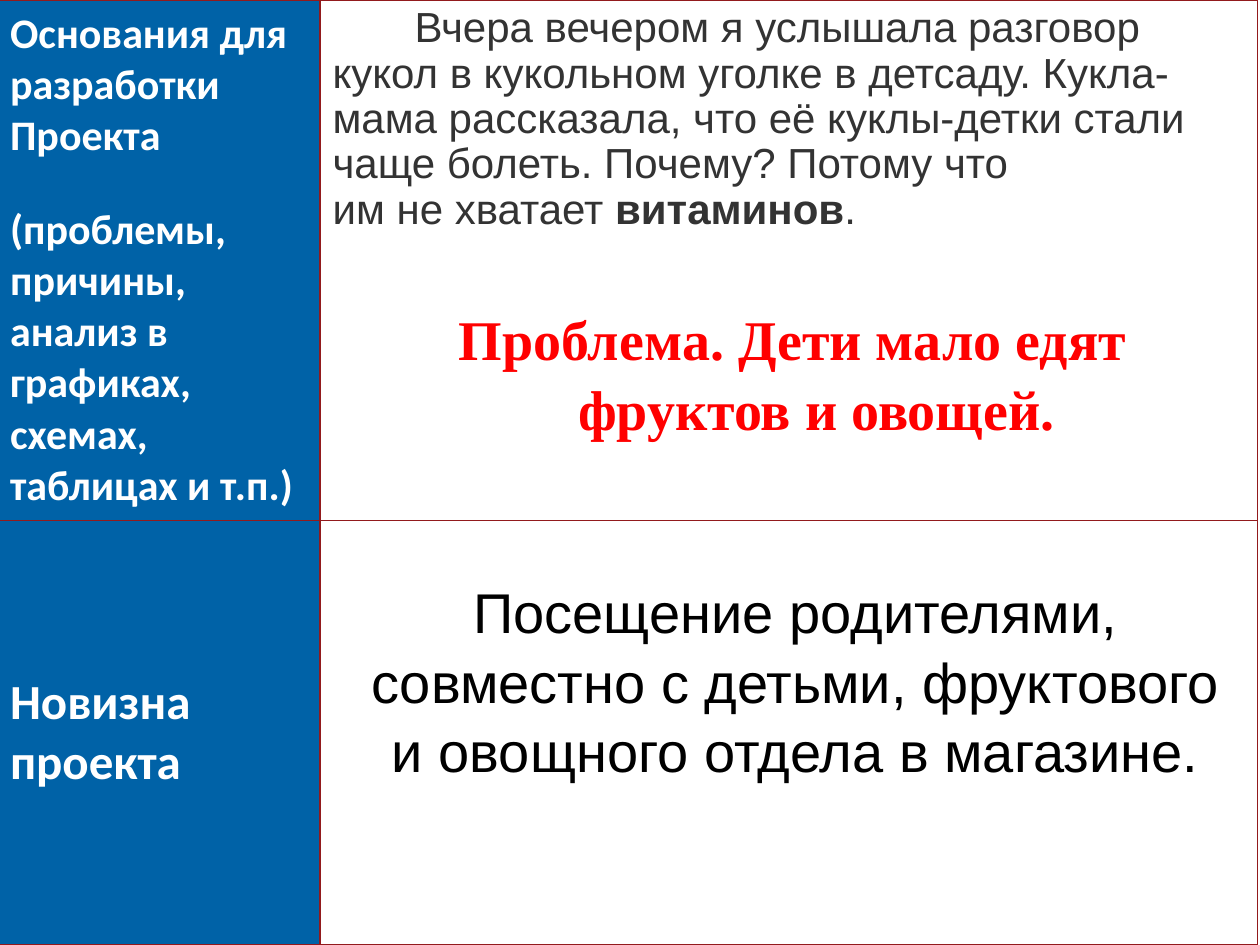
from pptx import Presentation
from pptx.dml.color import RGBColor
from pptx.enum.text import MSO_ANCHOR, PP_ALIGN
from pptx.oxml import parse_xml
from pptx.oxml.ns import nsdecls
from pptx.util import Inches, Pt

BLUE = RGBColor(0x00, 0x62, 0xA7)
WHITE = RGBColor(0xFF, 0xFF, 0xFF)
GRAY = RGBColor(0x33, 0x33, 0x33)
RED = RGBColor(0xFF, 0x00, 0x00)
BLACK = RGBColor(0x00, 0x00, 0x00)
BORDER = RGBColor(0x92, 0x1A, 0x1D)


def add_run(paragraph, text, font, size, color, bold=False):
    run = paragraph.add_run()
    run.text = text
    run.font.name = font
    run.font.size = Pt(size)
    run.font.color.rgb = color
    run.font.bold = bold


def add_borders(cell):
    properties = cell._tc.get_or_add_tcPr()
    for position, side in enumerate(("lnL", "lnR", "lnT", "lnB")):
        properties.insert(position, parse_xml(
            f'<a:{side} {nsdecls("a")} w="12700"><a:solidFill>'
            f'<a:srgbClr val="{BORDER}"/></a:solidFill></a:{side}>'))


prs = Presentation()
prs.slide_width = Inches(10)
prs.slide_height = Inches(7.5)
slide = prs.slides.add_slide(prs.slide_layouts[6])

passport = slide.shapes.add_table(
    2, 2, Inches(-0.02), Inches(0), Inches(10), Inches(7.5)).table
for column, width in zip(passport.columns, (2.56, 7.44)):
    column.width = Inches(width)
for row, height in zip(passport.rows, (4.13, 3.37)):
    row.height = Inches(height)
    for cell, fill in zip(row.cells, (BLUE, WHITE)):
        cell.fill.solid()
        cell.fill.fore_color.rgb = fill
        add_borders(cell)

headings = (
    (24, ("Основания для разработки Проекта",
          "(проблемы, причины, анализ в графиках, схемах, таблицах и т.п.)")),
    (28, ("Новизна проекта",)),
)
for row_index, (size, lines) in enumerate(headings):
    heading = passport.cell(row_index, 0)
    heading.vertical_anchor = MSO_ANCHOR.MIDDLE
    for line_index, line in enumerate(lines):
        if line_index == 0:
            paragraph = heading.text_frame.paragraphs[0]
        else:
            paragraph = heading.text_frame.add_paragraph()
            paragraph.space_before = Pt(24)
        add_run(paragraph, line, "Calibri", size, WHITE, True)

story = passport.cell(0, 1).text_frame
overheard = story.paragraphs[0]
overheard._p.get_or_add_pPr().set("indent", str(Inches(0.65)))
add_run(overheard, "Вчера вечером я услышала разговор кукол в кукольном уголке "
        "в детсаду. Кукла-мама рассказала, что её куклы-детки стали чаще "
        "болеть. Почему? Потому что", "Arial", 24, GRAY)
reason = story.add_paragraph()
for text, bold in (("им не хватает ", False), ("витаминов", True), (".", False)):
    add_run(reason, text, "Arial", 24, GRAY, bold)
for paragraph in story.paragraphs:
    paragraph.line_spacing = 0.97

statements = (
    (2.97, 2.35, 6.64, 1.18, 0.38, "Times New Roman", RED, True,
     "Проблема. Дети мало едят фруктов и овощей."),
    (2.81, 4.51, 7.01, 1.72, 0, "Arial", BLACK, False,
     "Посещение родителями, совместно с детьми, фруктового и овощного "
     "отдела в магазине."),
)
for left, top, width, height, hanging, font, color, bold, text in statements:
    statement = slide.shapes.add_textbox(
        Inches(left), Inches(top), Inches(width), Inches(height)).text_frame
    statement.word_wrap = True
    paragraph = statement.paragraphs[0]
    paragraph.alignment = PP_ALIGN.CENTER
    paragraph.line_spacing = 1.04
    if hanging:
        indents = paragraph._p.get_or_add_pPr()
        indents.set("marL", str(Inches(hanging)))
        indents.set("indent", str(Inches(-hanging)))
    add_run(paragraph, text, font, 32, color, bold)

prs.save("out.pptx")
